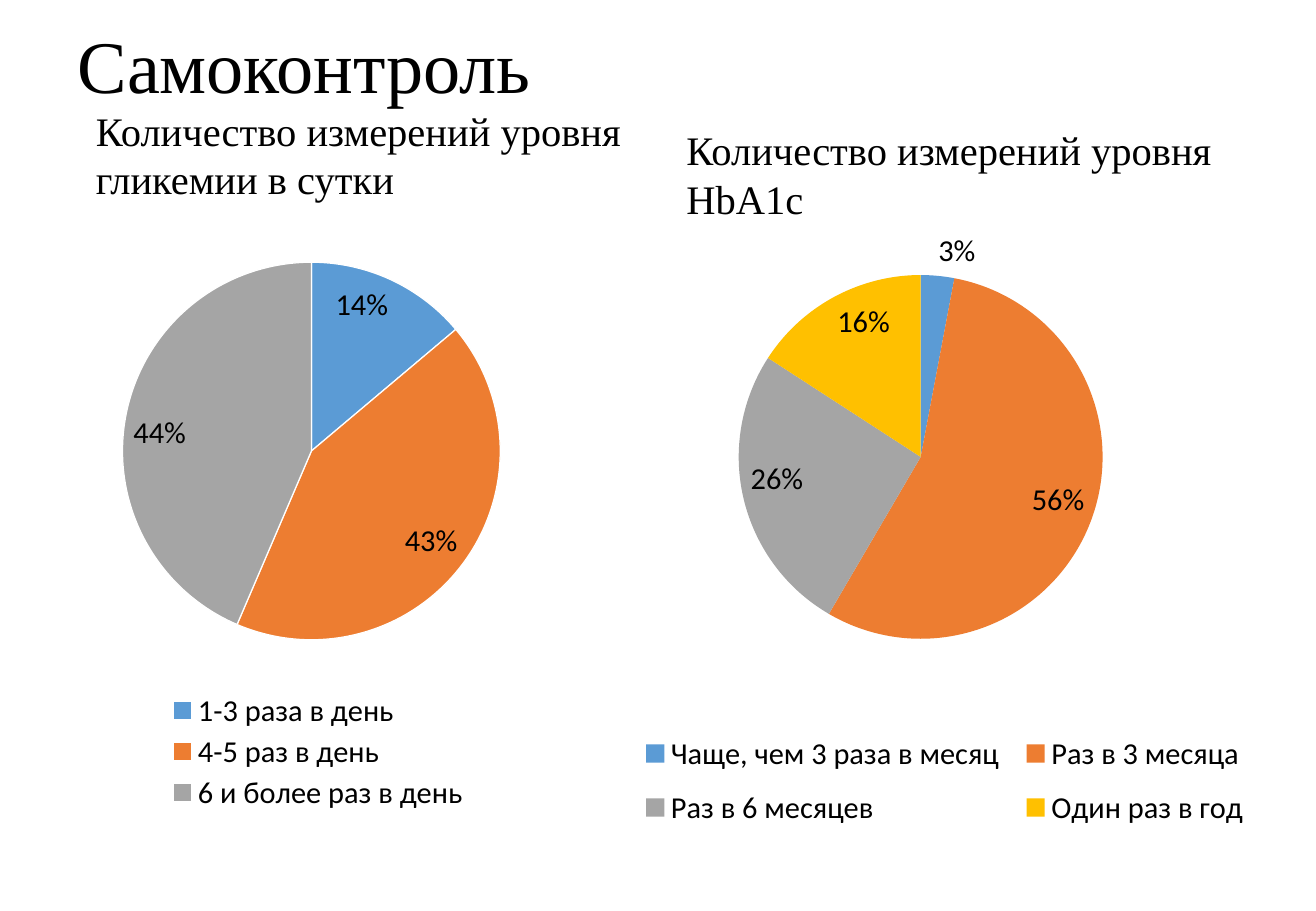
from lxml import etree
from pptx import Presentation
from pptx.chart.data import CategoryChartData
from pptx.dml.color import RGBColor
from pptx.enum.chart import XL_CHART_TYPE as ChartType
from pptx.enum.chart import XL_LABEL_POSITION as LabelPosition
from pptx.enum.chart import XL_LEGEND_POSITION as LegendPosition
from pptx.enum.text import MSO_ANCHOR as Anchor
from pptx.oxml.ns import qn
from pptx.util import Inches, Pt

# Content: boxes are left, top, width, height in inches
COLOURS = {"text": "000000", "edge": "FFFFFF", "blue": "5B9BD5",
           "orange": "ED7D31", "grey": "A5A5A5", "yellow": "FFC000"}
SLICES = ["blue", "orange", "grey", "yellow"]
HEADING_FONT, CHART_FONT = "Times New Roman", "Calibri"
PERCENT = '0"%"'

TITLE = ("Самоконтроль", (0.54, 0.18, 9.34, 0.78))
# Plot and legend areas are fractions of the chart's box
PANELS = [
    {
        "heading": "Количество измерений уровня гликемии в сутки",
        "heading_box": (0.69, 0.82, 4.87, 0.91),
        "chart_box": (0.74, 2, 5.36, 4.76),
        "values": {"1-3 раза в день": 14, "4-5 раз в день": 43,
                   "6 и более раз в день": 44},
        "plot": (0.05, 0.02, 0.58, 0.68),
        "legend": (0.1, 0.77, 0.5, 0.22),
        "legend_side": LegendPosition.RIGHT,
        "edges": True,
        "outside": [],
    },
    {
        "heading": "Количество измерений уровня НbA1с",
        "heading_box": (5.55, 0.98, 4.87, 0.91),
        "chart_box": (4.78, 1.27, 5.65, 5.73),
        "values": {"Чаще, чем 3 раза в месяц": 3, "Раз в 3 месяца": 56,
                   "Раз в 6 месяцев": 26, "Один раз в год": 16},
        "plot": (0.23, 0.17, 0.53, 0.53),
        "legend": (0.07, 0.81, 0.92, 0.18),
        "legend_side": LegendPosition.TOP,
        "edges": False,
        "outside": [0],
    },
]


def colour(name):
    return RGBColor.from_string(COLOURS[name])


def style_font(font, name, size):
    font.name, font.size = name, Pt(size)
    font.color.rgb = colour("text")


def add_text(slide, text, box, size, anchor=Anchor.TOP, line_spacing=None):
    frame = slide.shapes.add_textbox(*map(Inches, box)).text_frame
    frame.word_wrap = True
    frame.vertical_anchor = anchor
    frame.text = text
    paragraph = frame.paragraphs[0]
    paragraph.line_spacing = line_spacing
    style_font(paragraph.runs[0].font, HEADING_FONT, size)


def set_layout(element, index, area, inner=False):
    """Place a plot area or a legend at fixed fractions of the chart."""
    for old in element.findall(qn("c:layout")):
        element.remove(old)
    layout = etree.Element(qn("c:layout"))
    manual = etree.SubElement(layout, qn("c:manualLayout"))
    settings = [("layoutTarget", "inner")] if inner else []
    settings += [("xMode", "edge"), ("yMode", "edge")]
    settings += zip("xywh", area)
    for tag, value in settings:
        etree.SubElement(manual, qn("c:" + tag)).set("val", str(value))
    element.insert(index, layout)


def add_pie(slide, panel):
    data = CategoryChartData(number_format=PERCENT)
    data.categories = list(panel["values"])
    data.add_series("Series 1", list(panel["values"].values()))
    chart = slide.shapes.add_chart(
        ChartType.PIE, *map(Inches, panel["chart_box"]), data).chart
    chart.has_title = False
    style_font(chart.font, CHART_FONT, 18)

    # Slices
    plot = chart.plots[0]
    plot.vary_by_categories = True
    points = plot.series[0].points
    for index in range(len(panel["values"])):
        slice_format = points[index].format
        slice_format.fill.solid()
        slice_format.fill.fore_color.rgb = colour(SLICES[index])
        if panel["edges"]:
            slice_format.line.color.rgb = colour("edge")
            slice_format.line.width = Pt(0.75)
        else:
            slice_format.line.fill.background()

    # Labels
    labels = plot.series[0].data_labels
    labels.show_value = True
    labels.number_format = PERCENT
    labels.number_format_is_linked = False
    labels.position = LabelPosition.INSIDE_END
    style_font(labels.font, CHART_FONT, 18)
    for index in panel["outside"]:
        label = points[index].data_label
        label.position = LabelPosition.OUTSIDE_END
        style_font(label.font, CHART_FONT, 18)

    # Legend and plot placement
    chart.has_legend = True
    legend = chart.legend
    legend.position = panel["legend_side"]
    legend.include_in_layout = False
    style_font(legend.font, CHART_FONT, 18)
    chart_space = chart.element
    set_layout(chart_space.find(".//" + qn("c:legend")), 1, panel["legend"])
    set_layout(chart_space.find(".//" + qn("c:plotArea")), 0, panel["plot"],
               inner=True)


def main():
    presentation = Presentation()
    presentation.slide_width = Inches(10.83)
    presentation.slide_height = Inches(7.5)
    slide = presentation.slides.add_slide(presentation.slide_layouts[6])

    # Charts below, then title and headings
    for panel in PANELS:
        add_pie(slide, panel)
    add_text(slide, *TITLE, 44, Anchor.MIDDLE, 0.9)
    for panel in PANELS:
        add_text(slide, panel["heading"], panel["heading_box"], 24)

    presentation.save("out.pptx")


if __name__ == "__main__":
    main()
